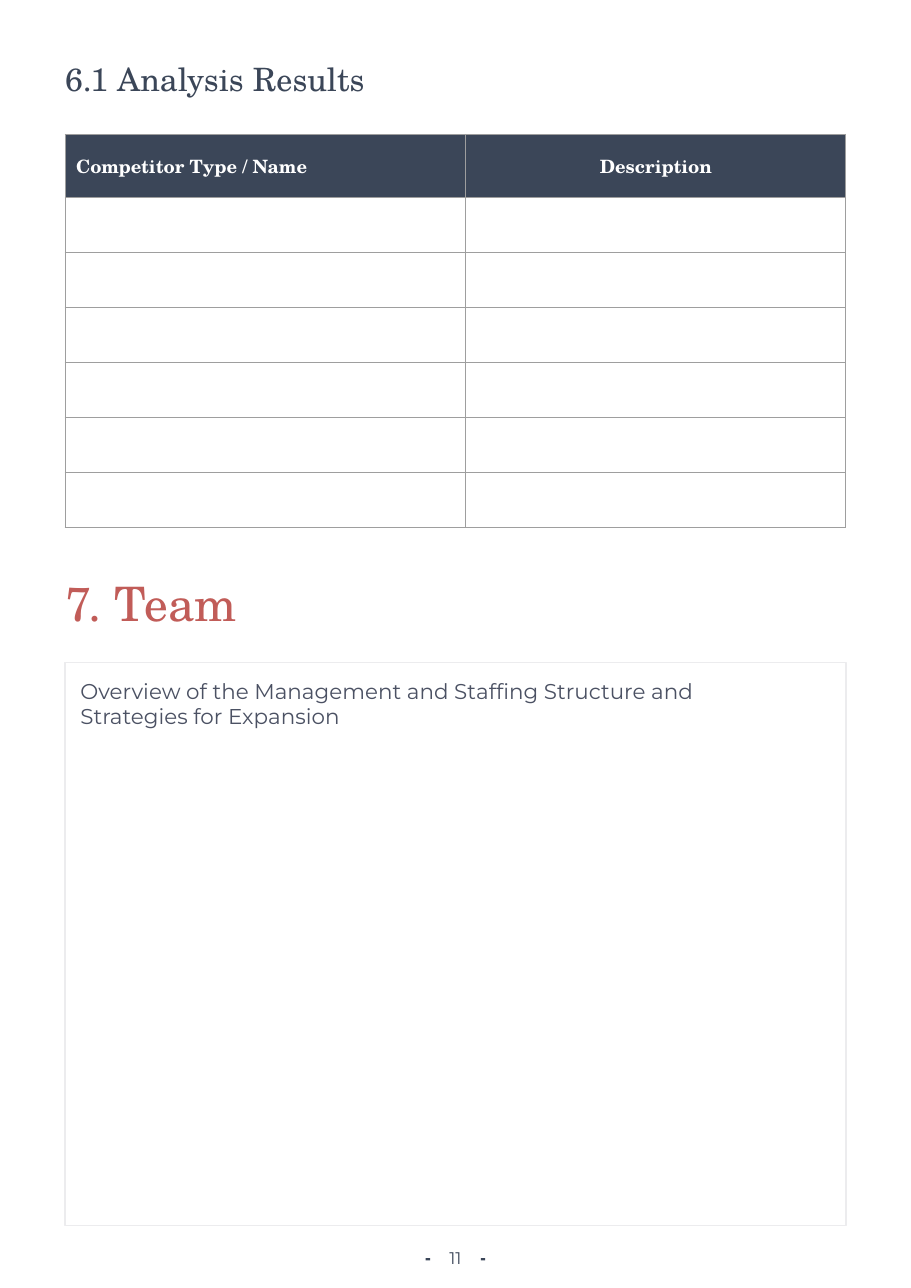
from lxml import etree
from pptx import Presentation
from pptx.dml.color import RGBColor
from pptx.enum.shapes import MSO_SHAPE
from pptx.enum.text import MSO_ANCHOR, PP_ALIGN
from pptx.oxml.ns import qn
from pptx.util import Inches, Pt

LEFT, CENTER = PP_ALIGN.LEFT, PP_ALIGN.CENTER
TOP, MIDDLE = MSO_ANCHOR.TOP, MSO_ANCHOR.MIDDLE
RECTANGLE = MSO_SHAPE.RECTANGLE

COLORS = {"navy": "3B4658", "red": "C15C58", "slate": "4B5163",
          "frame": "ECECEE", "grid": "9E9E9E", "white": "FFFFFF"}
SERIF, SANS = "TeX Gyre Schola", "Montserrat"

# text, top, height, size, colour
HEADINGS = [("6.1 Analysis Results", 0.54, 0.35, 21, "navy"),
            ("7. Team", 5.21, 0.52, 31, "red")]
TABLE_HEADER = [("Competitor Type / Name", LEFT), ("Description", CENTER)]
TEAM_PROMPT = ["Overview of the Management and Staffing Structure and",
               "Strategies for Expansion"]
PAGE_NUMBER = "11"

PAGE_W, PAGE_H = 8.27, 11.69
MARGIN = 0.59
CONTENT_W = PAGE_W - 2 * MARGIN
TABLE_TOP, HEADER_H, ROW_H, EMPTY_ROWS = 1.22, 0.57, 0.5, 6
COLUMN_WIDTHS = [3.64, CONTENT_W - 3.64]
TEAM_TOP, TEAM_H = 6.01, 5.11
DASH_W, DASH_H, DASH_OFFSET = 0.04, 0.02, 0.25


def rgb(name):
    return RGBColor.from_string(COLORS[name])


def box(left, top, width, height):
    return [Inches(v) for v in (left, top, width, height)]


def write(tf, lines, font, size, color, align=LEFT, bold=False):
    tf.text = "\n".join(lines)
    for p in tf.paragraphs:
        p.alignment = align
        p.font.name, p.font.size, p.font.bold = font, Pt(size), bold
        p.font.color.rgb = rgb(color)


def set_insets(target, left, top, right, bottom):
    target.margin_left, target.margin_top = Inches(left), Inches(top)
    target.margin_right, target.margin_bottom = Inches(right), Inches(bottom)


def add_text(s, area, text, font, size, color, align=LEFT):
    tf = s.shapes.add_textbox(*box(*area)).text_frame
    tf.word_wrap = True
    set_insets(tf, 0, 0, 0, 0)
    write(tf, [text], font, size, color, align)


def add_rect(s, area):
    sp = s.shapes.add_shape(RECTANGLE, *box(*area))
    sp.shadow.inherit = False
    return sp


def set_borders(cell):
    tc_pr = cell._tc.get_or_add_tcPr()
    for i, side in enumerate(("a:lnL", "a:lnR", "a:lnT", "a:lnB")):
        ln = etree.Element(qn(side), w=str(Pt(0.75)))
        fill = etree.SubElement(ln, qn("a:solidFill"))
        etree.SubElement(fill, qn("a:srgbClr"), val=COLORS["grid"])
        tc_pr.insert(i, ln)


def add_competitor_table(s):
    height = HEADER_H + EMPTY_ROWS * ROW_H
    table = s.shapes.add_table(
        EMPTY_ROWS + 1, len(TABLE_HEADER),
        *box(MARGIN, TABLE_TOP, CONTENT_W, height)).table
    table.first_row = table.horz_banding = False
    for column, width in zip(table.columns, COLUMN_WIDTHS):
        column.width = Inches(width)
    for i, row in enumerate(table.rows):
        row.height = Inches(ROW_H if i else HEADER_H)
        for cell in row.cells:
            cell.fill.background()
            set_borders(cell)
    for cell, (label, align) in zip(table.rows[0].cells, TABLE_HEADER):
        cell.fill.solid()
        cell.fill.fore_color.rgb = rgb("navy")
        cell.vertical_anchor = MIDDLE
        set_insets(cell, 0.1, 0.1, 0.1, 0.1)
        write(cell.text_frame, [label], SERIF, 12, "white", align, True)


def add_team_box(s):
    sp = add_rect(s, (MARGIN, TEAM_TOP, CONTENT_W, TEAM_H))
    sp.fill.background()
    sp.line.color.rgb = rgb("frame")
    sp.line.width = Pt(0.75)
    tf = sp.text_frame
    tf.word_wrap = True
    tf.vertical_anchor = TOP
    set_insets(tf, 0.14, 0.14, 0.1, 0.1)
    write(tf, TEAM_PROMPT, SANS, 14, "slate")


def add_page_number(s):
    middle = PAGE_W / 2
    add_text(s, (middle - 0.175, 11.32, 0.35, 0.19), PAGE_NUMBER,
             SANS, 11, "navy", CENTER)
    for offset in (-DASH_OFFSET, DASH_OFFSET):
        dash = add_rect(s, (middle + offset - DASH_W / 2, 11.42, DASH_W, DASH_H))
        dash.fill.solid()
        dash.fill.fore_color.rgb = rgb("navy")
        dash.line.fill.background()


def main():
    prs = Presentation()
    prs.slide_width, prs.slide_height = Inches(PAGE_W), Inches(PAGE_H)
    s = prs.slides.add_slide(prs.slide_layouts[6])
    add_page_number(s)
    for text, top, height, size, color in HEADINGS:
        add_text(s, (MARGIN, top, CONTENT_W, height), text, SERIF, size, color)
    add_team_box(s)
    add_competitor_table(s)
    prs.save("out.pptx")


if __name__ == "__main__":
    main()
